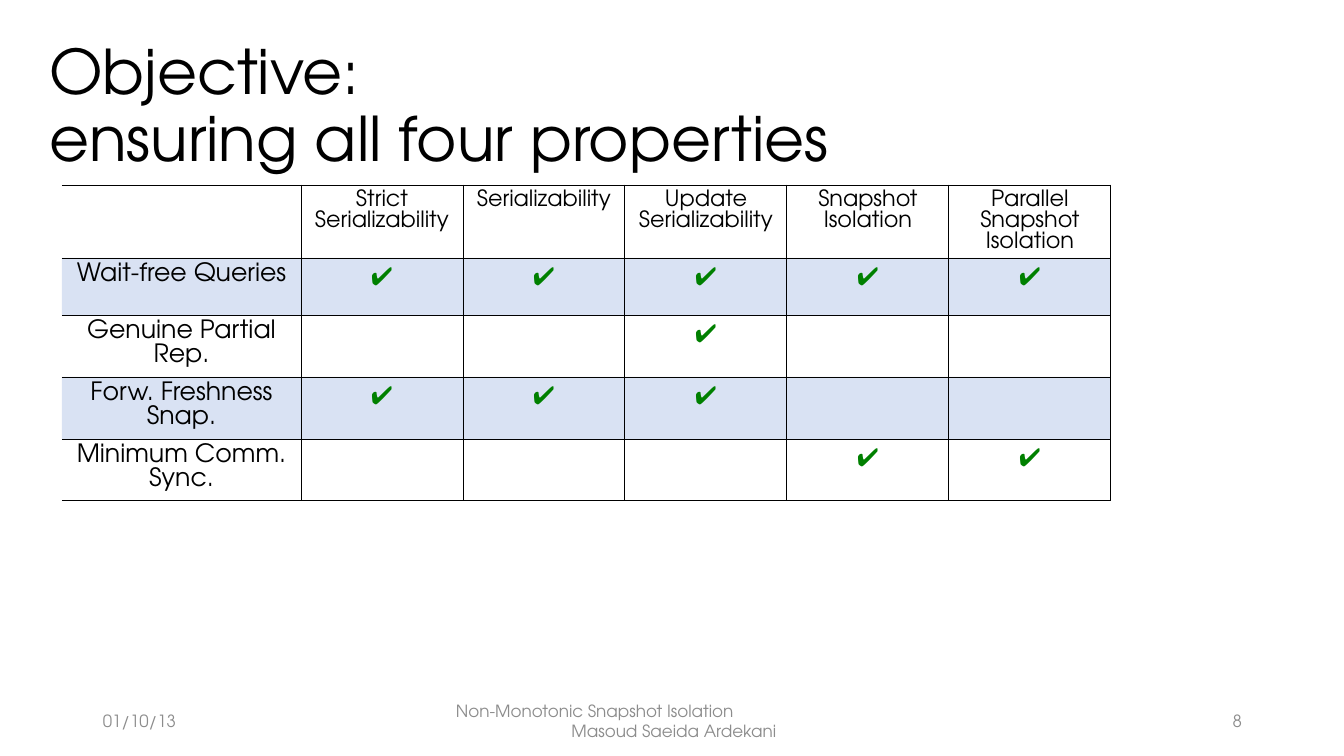
import pptx
import pptx.util
import pptx.dml.color
import pptx.enum.text
import pptx.oxml
import pptx.oxml.ns
from dataclasses import dataclass

TITLE = "Objective:\vensuring all four properties"
CRITERIA = [
    "Strict\nSerializability",
    "Serializability",
    "Update\nSerializability",
    "Snapshot\nIsolation",
    "Parallel\nSnapshot Isolation",
]
PROPERTIES = [
    ("Wait-free Queries", (1, 1, 1, 1, 1)),
    ("Genuine Partial Rep.", (0, 0, 1, 0, 0)),
    ("Forw. Freshness Snap.", (1, 1, 1, 0, 0)),
    ("Minimum Comm. Sync.", (0, 0, 0, 1, 1)),
]
CHECK = "✔"
LEFT, CENTER, RIGHT = (
    pptx.enum.text.PP_ALIGN.LEFT,
    pptx.enum.text.PP_ALIGN.CENTER,
    pptx.enum.text.PP_ALIGN.RIGHT,
)
FOOTERS = [
    ("01/10/13", 93, 302, [LEFT]),
    ("Non-Monotonic Snapshot Isolation\nMasoud Saeida Ardekani", 446, 456, [LEFT, CENTER]),
    ("8", 950, 302, [RIGHT]),
]
SLIDE_SIZE = (1344, 756)
TITLE_BOX = (39, 35, 1159, 146)
TABLE_AT = (62, 185)
COLUMN_WIDTHS = [239] + [162] * len(CRITERIA)
ROW_HEIGHTS = [73, 57, 62, 62, 62]
FOOTER_TOP, FOOTER_HEIGHT = 701, 40


@dataclass(frozen=True)
class Theme:
    font: str = "TeX Gyre Adventor"
    check_font: str = "Arial"
    ink: str = "000000"
    accent: str = "4472C4"
    check: str = "008000"
    muted: str = "8C8C8C"
    title_size: int = 44
    header_size: int = 16
    body_size: int = 18
    footer_size: int = 12
    band_alpha: int = 20
    border_width: float = 0.75


THEME = Theme()


def px(length):
    return pptx.util.Emu(round(length * 914400 / 100.8))


def write(frame, text, size, color=THEME.ink, font=THEME.font, bold=False,
          aligns=(LEFT,), spacing=1.0):
    for index, line in enumerate(text.split("\n")):
        paragraph = frame.add_paragraph() if index else frame.paragraphs[0]
        paragraph.text = line
        paragraph.alignment = aligns[min(index, len(aligns) - 1)]
        paragraph.line_spacing = spacing
        for run in paragraph.runs:
            run.font.size = pptx.util.Pt(size)
            run.font.name = font
            run.font.bold = bold
            run.font.color.rgb = pptx.dml.color.RGBColor.from_string(color)


def shade(cell, banded):
    if not banded:
        cell.fill.background()
        return
    cell.fill.solid()
    cell.fill.fore_color.rgb = pptx.dml.color.RGBColor.from_string(THEME.accent)
    color = cell.fill.fore_color._xFill.find(pptx.oxml.ns.qn("a:srgbClr"))
    alpha = color.makeelement(pptx.oxml.ns.qn("a:alpha"), {"val": str(THEME.band_alpha * 1000)})
    color.append(alpha)


def border(cell, **sides):
    properties = cell._tc.get_or_add_tcPr()
    width = pptx.util.Pt(THEME.border_width)
    for index, side in enumerate("LRTB"):
        color = sides[side]
        paint = f'<a:solidFill><a:srgbClr val="{color}"/></a:solidFill>' if color else "<a:noFill/>"
        line = pptx.oxml.parse_xml(
            f'<a:ln{side} {pptx.oxml.ns.nsdecls("a")} w="{width}">{paint}</a:ln{side}>'
        )
        properties.insert(index, line)


def add_property_table(slide):
    rows, columns = len(ROW_HEIGHTS), len(COLUMN_WIDTHS)
    table = slide.shapes.add_table(
        rows, columns, *map(px, (*TABLE_AT, sum(COLUMN_WIDTHS), sum(ROW_HEIGHTS)))
    ).table
    table.first_row = table.horz_banding = False
    for column, width in zip(table.columns, COLUMN_WIDTHS):
        column.width = px(width)
    for row, height in zip(table.rows, ROW_HEIGHTS):
        row.height = px(height)

    for index, criterion in enumerate(CRITERIA, 1):
        write(table.cell(0, index).text_frame, criterion, THEME.header_size, aligns=[CENTER])
    for row, (name, marks) in enumerate(PROPERTIES, 1):
        write(table.cell(row, 0).text_frame, name, THEME.body_size, aligns=[CENTER])
        for column, met in enumerate(marks, 1):
            if met:
                write(table.cell(row, column).text_frame, CHECK, THEME.body_size,
                      color=THEME.check, font=THEME.check_font, bold=True, aligns=[CENTER])

    for row in range(rows):
        for column in range(columns):
            cell = table.cell(row, column)
            shade(cell, row % 2 == 1)
            border(cell, L=THEME.ink if column else None, R=THEME.ink, T=THEME.ink, B=THEME.ink)


def main():
    deck = pptx.Presentation()
    deck.slide_width, deck.slide_height = map(px, SLIDE_SIZE)
    slide = deck.slides.add_slide(deck.slide_layouts[5])

    title = slide.shapes.title
    title.left, title.top, title.width, title.height = map(px, TITLE_BOX)
    title.text_frame.auto_size = pptx.enum.text.MSO_AUTO_SIZE.NONE
    title.text_frame.vertical_anchor = pptx.enum.text.MSO_ANCHOR.MIDDLE
    write(title.text_frame, TITLE, THEME.title_size, spacing=0.9)

    add_property_table(slide)

    for text, left, width, aligns in FOOTERS:
        frame = slide.shapes.add_textbox(
            *map(px, (left, FOOTER_TOP, width, FOOTER_HEIGHT))
        ).text_frame
        frame.word_wrap = True
        frame.vertical_anchor = pptx.enum.text.MSO_ANCHOR.MIDDLE
        write(frame, text, THEME.footer_size, color=THEME.muted, aligns=aligns)

    deck.save("out.pptx")


if __name__ == "__main__":
    main()
